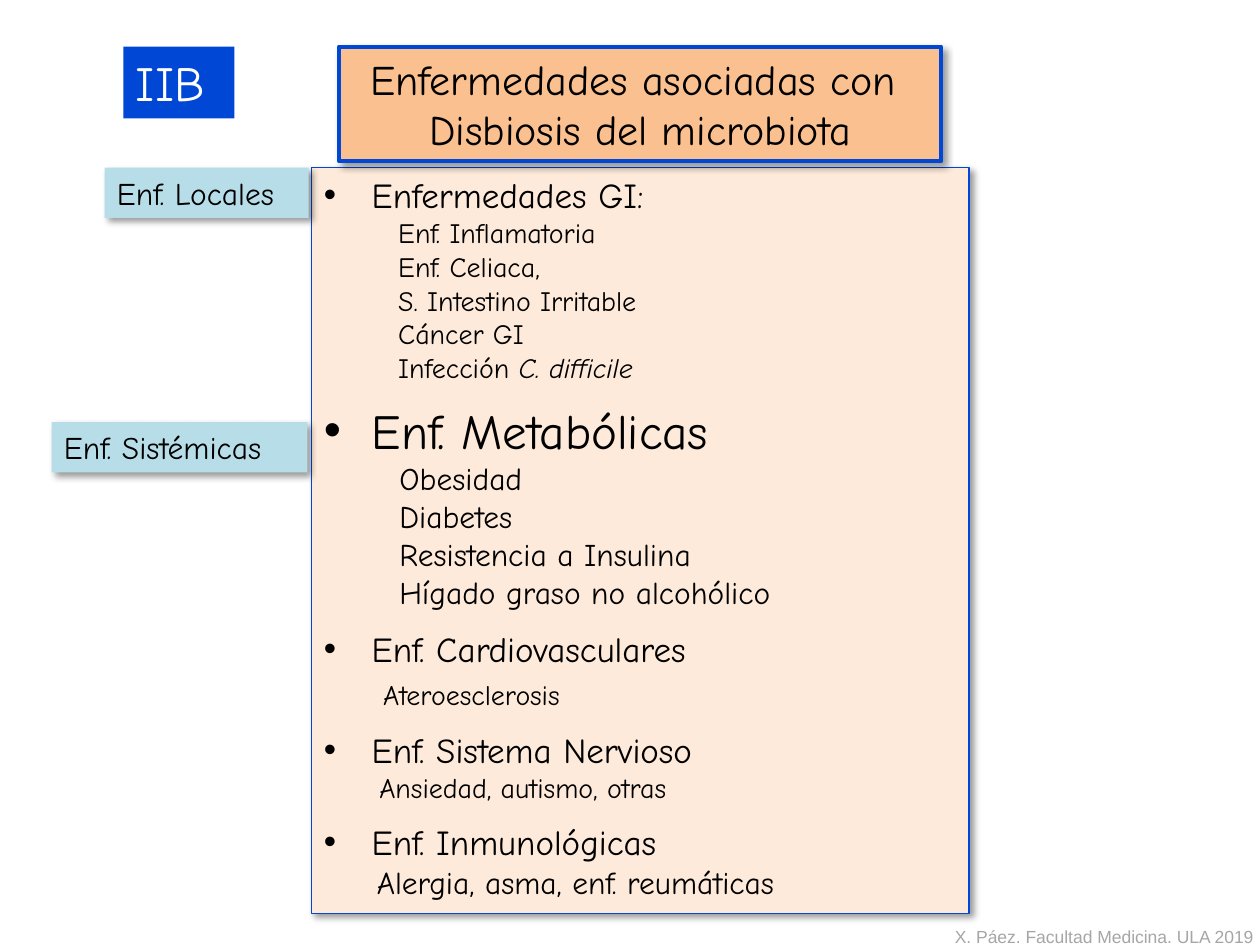
from lxml import etree
from pptx import Presentation
from pptx.dml.color import RGBColor
from pptx.enum.shapes import MSO_SHAPE
from pptx.enum.text import MSO_ANCHOR, MSO_AUTO_SIZE, PP_ALIGN
from pptx.oxml.ns import qn
from pptx.util import Inches, Pt

RECTANGLE = MSO_SHAPE.RECTANGLE
TOP, MIDDLE = MSO_ANCHOR.TOP, MSO_ANCHOR.MIDDLE
LEFT, CENTER = PP_ALIGN.LEFT, PP_ALIGN.CENTER
NO_AUTOFIT = MSO_AUTO_SIZE.NONE

FONT = "Comic Neue"
BLACK, WHITE, GREY = "000000", "FFFFFF", "A6A6A6"
BLUE, ORANGE, PEACH, AQUA = "0047D6", "FAC090", "FDEADA", "B7DEE8"
HEADING_INDENT = 0.38
GROUP_GAP = 9.6

# heading, heading size, item size, item indent, gap before items, items
DISEASE_GROUPS = [
    ("Enfermedades GI:", 20, 16, 0.59, 0,
     ["Enf. Inflamatoria", "Enf. Celiaca,", "S. Intestino Irritable",
      "Cáncer GI", ("Infección ", "C. difficile")]),
    ("Enf. Metabólicas", 28, 18, 0.6, 0,
     ["Obesidad", "Diabetes", "Resistencia a Insulina",
      "Hígado graso no alcohólico"]),
    ("Enf. Cardiovasculares", 20, 16, 0.47, 4.8, ["Ateroesclerosis"]),
    ("Enf. Sistema Nervioso", 20, 16, 0.44, 0, ["Ansiedad, autismo, otras"]),
    ("Enf. Inmunológicas", 20, 18, 0.42, 0, ["Alergia, asma, enf. reumáticas"]),
]


def color(value):
    return RGBColor.from_string(value)


def place(shape, box):
    shape.left, shape.top, shape.width, shape.height = map(Inches, box)


def paint(shape, fill, line=None, line_width=0.75, shadow=True):
    shape.fill.solid()
    shape.fill.fore_color.rgb = color(fill)
    if line:
        shape.line.color.rgb = color(line)
        shape.line.width = Pt(line_width)
    else:
        shape.line.fill.background()
    shape.shadow.inherit = False
    if shadow:
        effects = shape.element.spPr.find(qn("a:effectLst"))
        outer = etree.SubElement(effects, qn("a:outerShdw"), blurRad=str(Pt(4)),
                                 dist=str(Pt(3)), dir="2700000", rotWithShape="0")
        black = etree.SubElement(outer, qn("a:srgbClr"), val=BLACK)
        etree.SubElement(black, qn("a:alpha"), val="40000")


def prepare_frame(shape, anchor, wrap=False):
    frame = shape.text_frame
    frame.auto_size = NO_AUTOFIT
    frame.word_wrap = wrap
    frame.vertical_anchor = anchor
    return frame


def format_para(para, size, ink=BLACK, font=FONT, align=LEFT, gap=0):
    para.alignment = align
    para.space_before = Pt(gap)
    for span in para.runs:
        span.font.size = Pt(size)
        span.font.name = font
        span.font.color.rgb = color(ink)


def set_indent(para, left, bullet=None):
    """Indent a paragraph; a bullet hangs in the whole indent."""
    properties = para._p.get_or_add_pPr()
    properties.set("marL", str(Inches(left)))
    properties.set("indent", str(-Inches(left) if bullet else 0))
    if bullet:
        etree.SubElement(properties, qn("a:buFont"), typeface="Arial")
        etree.SubElement(properties, qn("a:buChar"), char=bullet)
    else:
        etree.SubElement(properties, qn("a:buNone"))


def write_title(title, box):
    place(title, box)
    paint(title, ORANGE, BLUE, 2.25)
    frame = prepare_frame(title, MIDDLE)
    frame.text = "Enfermedades asociadas con \nDisbiosis del microbiota"
    for para in frame.paragraphs:
        format_para(para, 24, align=CENTER)


def write_disease_list(body, box):
    place(body, box)
    paint(body, PEACH, BLUE)
    frame = prepare_frame(body, TOP, wrap=True)
    para = frame.paragraphs[0]
    for index, group in enumerate(DISEASE_GROUPS):
        heading, heading_size, item_size, indent, item_gap, items = group
        if index:
            para = frame.add_paragraph()
        para.text = heading
        format_para(para, heading_size, gap=GROUP_GAP if index else 0)
        set_indent(para, HEADING_INDENT, "•")
        for item in items:
            para = frame.add_paragraph()
            plain, italic = (item, "") if isinstance(item, str) else item
            para.text = plain
            if italic:
                span = para.add_run()
                span.text = italic
                span.font.italic = True
            format_para(para, item_size, gap=item_gap)
            set_indent(para, indent)


def add_label(page, box, text, size, fill, ink=BLACK, shadow=True):
    label = page.shapes.add_shape(RECTANGLE, *map(Inches, box))
    paint(label, fill, shadow=shadow)
    frame = prepare_frame(label, TOP)
    frame.text = text
    format_para(frame.paragraphs[0], size, ink)


def add_credit(page, box):
    credit = page.shapes.add_textbox(*map(Inches, box))
    frame = prepare_frame(credit, TOP)
    frame.text = "X. Páez. Facultad Medicina. ULA 2019"
    format_para(frame.paragraphs[0], 10, GREY, "Arial")


def main():
    deck = Presentation()
    deck.slide_width, deck.slide_height = Inches(10), Inches(7.5)
    page = deck.slides.add_slide(deck.slide_layouts[1])
    title, body = page.shapes.title, page.placeholders[1]
    title.element.addprevious(body.element)  # the title's shadow falls on the list
    write_disease_list(body, (2.47, 1.33, 5.22, 5.92))
    write_title(title, (2.69, 0.37, 4.78, 0.91))
    add_label(page, (0.98, 0.37, 0.88, 0.57), "IIB", 28, BLUE, WHITE, shadow=False)
    add_credit(page, (7.48, 7.3, 2.59, 0.27))
    add_label(page, (0.83, 1.33, 1.62, 0.4), "Enf. Locales", 18, AQUA)
    add_label(page, (0.41, 3.35, 2.03, 0.4), "Enf. Sistémicas", 18, AQUA)
    deck.save("out.pptx")


if __name__ == "__main__":
    main()
